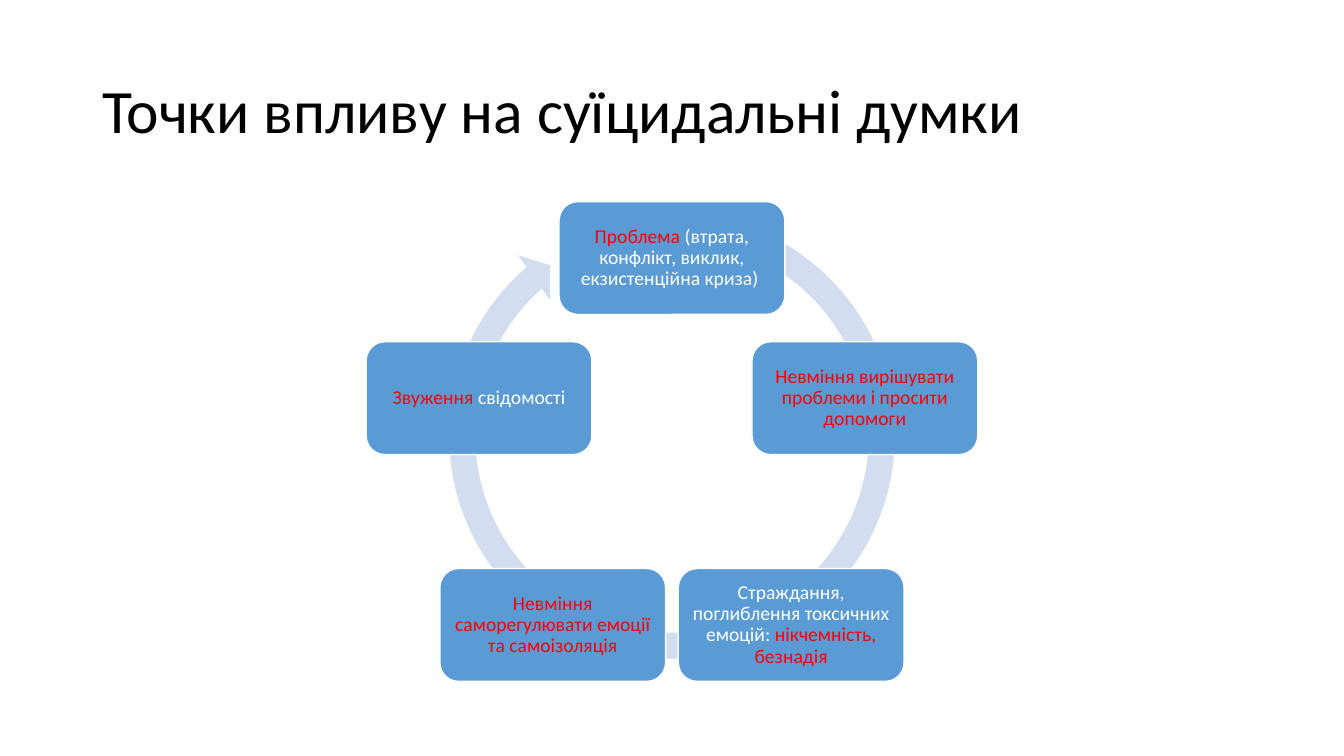
import math

from pptx import Presentation
from pptx.dml.color import RGBColor
from pptx.enum.shapes import MSO_SHAPE
from pptx.enum.text import MSO_ANCHOR, PP_ALIGN
from pptx.util import Pt

CIRCULAR_ARROW = MSO_SHAPE.CIRCULAR_ARROW
ROUNDED_BOX = MSO_SHAPE.ROUNDED_RECTANGLE
MIDDLE = MSO_ANCHOR.MIDDLE
CENTER = PP_ALIGN.CENTER

BLACK = RGBColor(0x00, 0x00, 0x00)
WHITE = RGBColor(0xFF, 0xFF, 0xFF)
RED = RGBColor(0xFF, 0x00, 0x00)
BLUE = RGBColor(0x5B, 0x9B, 0xD5)
PALE_BLUE = RGBColor(0xD2, 0xDE, 0xEF)
FONT = "Calibri"

# Stages clockwise from the top, each as coloured pieces of text
STAGES = [
    [("Проблема", RED), (" (втрата, конфлікт, виклик, екзистенційна криза) ", WHITE)],
    [("Невміння вирішувати проблеми і просити допомоги", RED)],
    [("Страждання, поглиблення токсичних емоцій: ", WHITE),
     ("нікчемність, безнадія", RED)],
    [("Невміння саморегулювати емоції та самоізоляція", RED)],
    [("Звуження ", RED), ("свідомості", WHITE)],
]
CENTER_X, CENTER_Y, RADIUS = 480, 329.2, 144.9
STAGE_W, STAGE_H, STAGE_INSET = 161.3, 80.65, 4.2
RING_TOP, RING_SIZE = 141.9, 339


def format_run(run, size, color):
    run.font.name = FONT
    run.font.size = Pt(size)
    run.font.color.rgb = color


prs = Presentation()
prs.slide_width, prs.slide_height = Pt(960), Pt(540)
slide = prs.slides.add_slide(prs.slide_layouts[6])

# Title
title = slide.shapes.add_textbox(Pt(66), Pt(28.75), Pt(828), Pt(104.4)).text_frame
title.word_wrap = True
title.vertical_anchor = MIDDLE
title.text = "Точки впливу на суїцидальні думки"
title.paragraphs[0].line_spacing = 0.9
format_run(title.paragraphs[0].runs[0], 44, BLACK)

# Ring arrow behind the stages
ring = slide.shapes.add_shape(
    CIRCULAR_ARROW, Pt(CENTER_X - RING_SIZE / 2), Pt(RING_TOP), Pt(RING_SIZE), Pt(RING_SIZE))
ring.shadow.inherit = False
ring.fill.solid()
ring.fill.fore_color.rgb = PALE_BLUE
ring.line.fill.background()
# Thickness, head angle, end angle, start angle, head width
for index, value in enumerate([0.055, 3.31, 137.36, 174.1, 0.058]):
    ring.adjustments[index] = value

# Stages at the corners of a regular pentagon
for number, pieces in enumerate(STAGES):
    angle = math.tau * number / len(STAGES)
    left = CENTER_X + RADIUS * math.sin(angle) - STAGE_W / 2
    top = CENTER_Y - RADIUS * math.cos(angle) - STAGE_H / 2
    stage = slide.shapes.add_shape(ROUNDED_BOX, Pt(left), Pt(top), Pt(STAGE_W), Pt(STAGE_H))
    stage.shadow.inherit = False
    stage.fill.solid()
    stage.fill.fore_color.rgb = BLUE
    stage.line.color.rgb = WHITE
    stage.line.width = Pt(1)

    frame = stage.text_frame
    frame.word_wrap = True
    frame.vertical_anchor = MIDDLE
    frame.margin_left = frame.margin_right = Pt(STAGE_INSET)
    frame.margin_top = frame.margin_bottom = Pt(STAGE_INSET)
    label = frame.paragraphs[0]
    label.alignment = CENTER
    label.line_spacing = 0.9
    for text, color in pieces:
        run = label.add_run()
        run.text = text
        format_run(run, 14, color)

prs.save("out.pptx")
